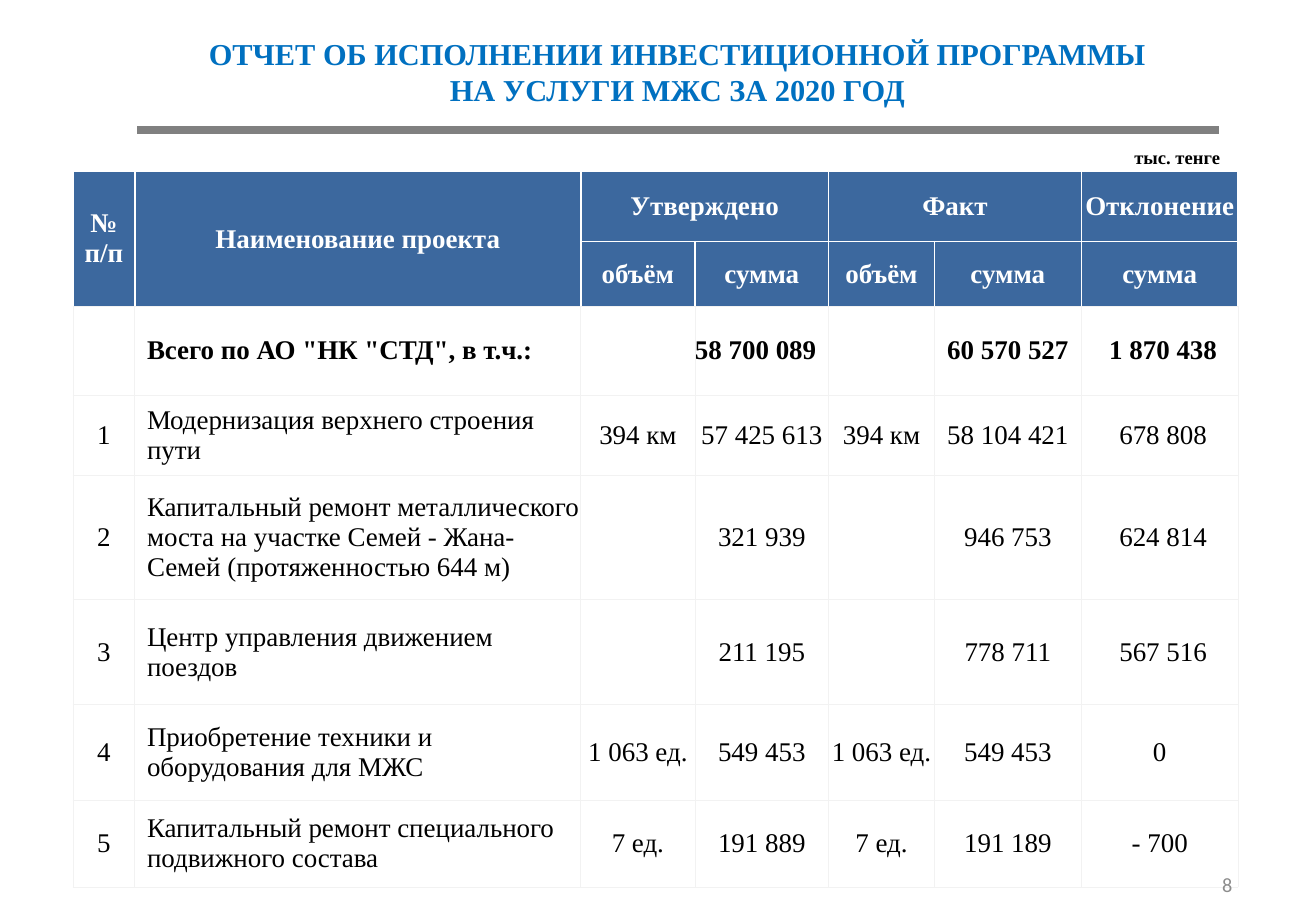
from lxml import etree
from pptx import Presentation
from pptx.dml.color import RGBColor
from pptx.enum.shapes import MSO_CONNECTOR
from pptx.enum.text import MSO_ANCHOR, PP_ALIGN
from pptx.oxml.ns import qn
from pptx.util import Inches, Pt

LEFT, MID, RIGHT = PP_ALIGN.LEFT, PP_ALIGN.CENTER, PP_ALIGN.RIGHT
MIDDLE, TOP = MSO_ANCHOR.MIDDLE, MSO_ANCHOR.TOP
STRAIGHT = MSO_CONNECTOR.STRAIGHT

# Content
TITLE = ["ОТЧЕТ ОБ ИСПОЛНЕНИИ ИНВЕСТИЦИОННОЙ ПРОГРАММЫ",
         "НА УСЛУГИ МЖС ЗА 2020 ГОД"]
UNIT = "тыс. тенге"
PAGE = "8"
ROWS = [
    ("№ п/п", "Наименование проекта", "Утверждено", "", "Факт", "", "Отклонение"),
    ("", "", "объём", "сумма", "объём", "сумма", "сумма"),
    ("", 'Всего по АО "НК "СТД", в т.ч.:', "", "58 700 089", "", "60 570 527",
     " 1 870 438"),
    ("1", "Модернизация верхнего строения пути", "394 км", "57 425 613",
     "394 км", "58 104 421", " 678 808"),
    ("2", "Капитальный ремонт металлического моста на участке Семей - "
     "Жана-Семей (протяженностью 644 м)", "", "321 939", "", "946 753", " 624 814"),
    ("3", "Центр управления движением поездов", "", "211 195", "", "778 711",
     " 567 516"),
    ("4", "Приобретение техники и оборудования для МЖС", "1 063 ед.", "549 453",
     "1 063 ед.", "549 453", "0"),
    ("5", "Капитальный ремонт специального подвижного состава", "7 ед.",
     "191 889", "7 ед.", "191 189", "- 700"),
]
WIDTHS = [0.51, 3.67, 0.94, 1.1, 0.87, 1.21, 1.29]
HEIGHTS = [0.58, 0.53, 0.73, 0.66, 1.02, 0.87, 0.79, 0.71]
SPANS = [((0, 0), (1, 0)), ((0, 1), (1, 1)), ((0, 2), (0, 3)), ((0, 4), (0, 5))]
HEAD, TOTAL, NAME = 2, 2, 1  # header row count, total row, name column

# Formats
SERIF = "Times New Roman"
WHITE, PALE, BLACK, BLUE = "FFFFFF", "F2F2F2", "000000", "3C689E"
TITLE_FONT = dict(name=SERIF, size=Pt(18), bold=True, color="0070C0")
UNIT_FONT = dict(name=SERIF, size=Pt(11), bold=True, color=BLACK)
PAGE_FONT = dict(name="Calibri", size=Pt(12), bold=False, color="8C8C8C")
CELL_FONT = dict(name=SERIF, size=Pt(16))


def rgb(code):
    return RGBColor.from_string(code)


def write(frame, lines, look, align):
    for i, line in enumerate(lines):
        para = frame.add_paragraph() if i else frame.paragraphs[0]
        para.alignment = align
        run = para.add_run()
        run.text = line
        for key, value in look.items():
            if key == "color":
                run.font.color.rgb = rgb(value)
            else:
                setattr(run.font, key, value)


def label(slide, place, lines, look, align, anchor):
    frame = slide.shapes.add_textbox(*map(Inches, place)).text_frame
    frame.word_wrap = True
    frame.vertical_anchor = anchor
    write(frame, lines, look, align)


def border(cell, side, color, width):
    props = cell._tc.get_or_add_tcPr()
    line = etree.SubElement(props, qn("a:ln" + side), w=str(Pt(width)))
    fill = etree.SubElement(line, qn("a:solidFill"))
    etree.SubElement(fill, qn("a:srgbClr"), val=color)


def fill_cell(cell, row, col, text):
    head = row < HEAD
    bottom = row == HEAD - 1 or (row == 0 and col <= NAME)
    for side in "LRTB":
        strong = head and not (side == "B" and bottom)
        border(cell, side, *((WHITE, 1) if strong else (PALE, 0.5)))
    if head:
        cell.fill.solid()
        cell.fill.fore_color.rgb = rgb(BLUE)
    else:
        cell.fill.background()
    cell.vertical_anchor = MIDDLE
    for edge in ("left", "right", "top", "bottom"):
        setattr(cell, "margin_" + edge, 0)
    if not text:
        return
    name = not head and col == NAME
    flush = name or (row == TOTAL and col == 3)
    look = dict(CELL_FONT, bold=row <= TOTAL, color=WHITE if head else BLACK)
    write(cell.text_frame, [text], look, LEFT if flush else MID)
    if name:
        props = cell.text_frame.paragraphs[0]._p.get_or_add_pPr()
        props.set("marL", str(Inches(0.1)))


def main():
    prs = Presentation()
    prs.slide_width, prs.slide_height = Inches(10.83), Inches(7.5)
    slide = prs.slides.add_slide(prs.slide_layouts[6])

    # Title and rule
    label(slide, (0.88, 0.24, 9.39, 0.71), TITLE, TITLE_FONT, MID, TOP)
    rule = slide.shapes.add_connector(
        STRAIGHT, *map(Inches, (1.13, 1.07, 10.03, 1.07)))
    rule.line.color.rgb = rgb("808080")
    rule.line.width = Pt(4.5)
    etree.SubElement(rule._element.spPr, qn("a:effectLst"))
    label(slide, (8.88, 1.15, 1.26, 0.29), [UNIT], UNIT_FONT, RIGHT, MIDDLE)

    # Table
    size = map(Inches, (0.6, 1.41, sum(WIDTHS), sum(HEIGHTS)))
    table = slide.shapes.add_table(len(ROWS), len(WIDTHS), *size).table
    table.first_row = table.horz_banding = False
    for col, width in zip(table.columns, WIDTHS):
        col.width = Inches(width)
    for row, height in zip(table.rows, HEIGHTS):
        row.height = Inches(height)
    for start, end in SPANS:
        table.cell(*start).merge(table.cell(*end))
    for r, texts in enumerate(ROWS):
        for c, text in enumerate(texts):
            fill_cell(table.cell(r, c), r, c, text)

    # Page number
    label(slide, (7.99, 7.08, 2.25, 0.4), [PAGE], PAGE_FONT, RIGHT, MIDDLE)
    prs.save("out.pptx")


if __name__ == "__main__":
    main()
